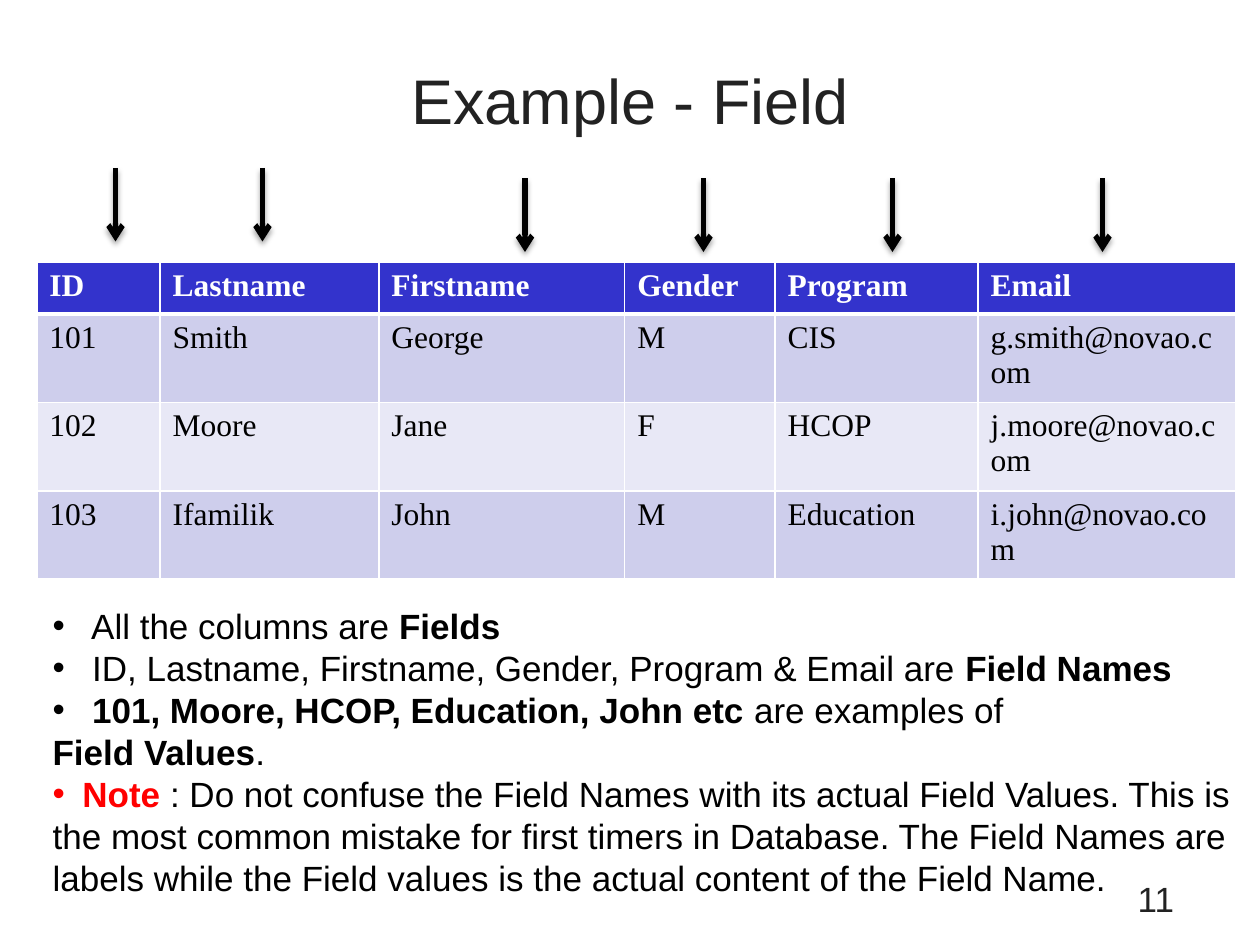
import pptx
import pptx.dml.color
import pptx.enum.shapes
import pptx.enum.text
import pptx.oxml
import pptx.oxml.ns
import pptx.util

Pt = pptx.util.Pt
RGBColor = pptx.dml.color.RGBColor
ALIGN = pptx.enum.text.PP_ALIGN
ANCHOR = pptx.enum.text.MSO_ANCHOR
NS = pptx.oxml.ns.nsdecls("a")

BLACK = RGBColor(0x00, 0x00, 0x00)
WHITE = RGBColor(0xFF, 0xFF, 0xFF)
GREY = RGBColor(0x22, 0x22, 0x22)
RED = RGBColor(0xFF, 0x00, 0x00)
BLUE = RGBColor(0x33, 0x33, 0xCC)
BANDS = (RGBColor(0xCE, 0xCE, 0xEC), RGBColor(0xE8, 0xE8, 0xF6))

SANS, SERIF = "Arial", "Times New Roman"
BULLET_INDENT = Pt(17)

COLUMN_WIDTHS = (70.5, 125, 140.5, 86, 116, 147)
HEADER_HEIGHT, RECORD_HEIGHT = 29.5, 50.5
RECORDS = (
    ("ID", "Lastname", "Firstname", "Gender", "Program", "Email"),
    ("101", "Smith", "George", "M", "CIS", "g.smith@novao.com"),
    ("102", "Moore", "Jane", "F", "HCOP", "j.moore@novao.com"),
    ("103", "Ifamilik", "John", "M", "Education", "i.john@novao.com"),
)
ARROWS = ((66, 96), (150, 96), (300, 102), (402, 102), (510, 102), (630, 102))
ARROW_LENGTH = 42

PLAIN = {"name": SANS, "size": Pt(20), "color": BLACK, "bold": False}
BOLD = {**PLAIN, "bold": True}
NOTE = {**BOLD, "color": RED}
SPACER = {**PLAIN, "name": SERIF}
NOTES = (
    (True, ((" ", SPACER), ("All the columns are ", PLAIN), ("Fields", BOLD))),
    (True, ((" ", PLAIN),
            ("ID, Lastname, Firstname, Gender, Program & Email are ", PLAIN),
            ("Field Names", BOLD))),
    (True, ((" 101, Moore, HCOP, Education, John etc ", BOLD),
            ("are examples of", PLAIN))),
    (False, (("Field Values", BOLD), (".", PLAIN))),
    (True, (("Note", NOTE),
            (" : Do not confuse the Field Names with its actual Field Values. This is", PLAIN))),
    (False, (("the most common mistake for first timers in Database. The Field Names are", PLAIN),)),
    (False, (("labels while the Field values is the actual content of the Field Name.", PLAIN),)),
)


def add_run(p, text, style):
    r = p.add_run()
    r.text = text
    for key, value in style.items():
        if key == "color":
            r.font.color.rgb = value
        else:
            setattr(r.font, key, value)


def add_text_box(s, box, **frame):
    tf = s.shapes.add_textbox(*map(Pt, box)).text_frame
    for key, value in frame.items():
        setattr(tf, key, value)
    return tf


def add_label(s, box, text, size, align, anchor):
    tf = add_text_box(s, box, word_wrap=True, vertical_anchor=anchor)
    p = tf.paragraphs[0]
    p.alignment = align
    add_run(p, text, {"name": SANS, "size": Pt(size), "color": GREY})


def add_bullet(p):
    pPr = p._p.get_or_add_pPr()
    pPr.set("marL", str(BULLET_INDENT))
    pPr.set("indent", str(-BULLET_INDENT))
    for xml in (f'<a:buFont {NS} typeface="{SANS}"/>', f'<a:buChar {NS} char="•"/>'):
        pPr.append(pptx.oxml.parse_xml(xml))


def add_notes(s, box):
    tf = add_text_box(s, box, word_wrap=False,
                      auto_size=pptx.enum.text.MSO_AUTO_SIZE.SHAPE_TO_FIT_TEXT)
    for i, (bulleted, runs) in enumerate(NOTES):
        p = tf.add_paragraph() if i else tf.paragraphs[0]
        if bulleted:
            add_bullet(p)
        for text, style in runs:
            add_run(p, text, style)


def set_borders(cell, **widths):
    tcPr = cell._tc.get_or_add_tcPr()
    for i, side in enumerate("LRTB"):
        tcPr.insert(i, pptx.oxml.parse_xml(
            f'<a:ln{side} {NS} w="{Pt(widths.get(side, 1))}"><a:solidFill>'
            f'<a:srgbClr val="{WHITE}"/></a:solidFill></a:ln{side}>'))


def add_records_table(s, left, top):
    heights = [HEADER_HEIGHT] + [RECORD_HEIGHT] * (len(RECORDS) - 1)
    box = (left, top, sum(COLUMN_WIDTHS), sum(heights))
    table = s.shapes.add_table(len(heights), len(COLUMN_WIDTHS), *map(Pt, box)).table
    for column, width in zip(table.columns, COLUMN_WIDTHS):
        column.width = Pt(width)
    for i, (record, height) in enumerate(zip(RECORDS, heights)):
        table.rows[i].height = Pt(height)
        header = i == 0
        style = {"name": SERIF, "size": Pt(18), "bold": header,
                 "color": WHITE if header else BLACK}
        for j, text in enumerate(record):
            cell = table.cell(i, j)
            cell.fill.solid()
            cell.fill.fore_color.rgb = BLUE if header else BANDS[(i - 1) % 2]
            set_borders(cell, B=3 if header else 1, T=3 if i == 1 else 1)
            add_run(cell.text_frame.paragraphs[0], text, style)


def add_down_arrow(s, x, y):
    line = s.shapes.add_connector(pptx.enum.shapes.MSO_CONNECTOR.STRAIGHT,
                                  Pt(x), Pt(y), Pt(x), Pt(y + ARROW_LENGTH))
    line.line.color.rgb = BLACK
    line.line.width = Pt(3)
    line.line._get_or_add_ln().append(
        pptx.oxml.parse_xml(f'<a:tailEnd {NS} type="arrow"/>'))
    line._element.spPr.append(pptx.oxml.parse_xml(
        f'<a:effectLst {NS}><a:outerShdw blurRad="{Pt(3.1)}" dist="{Pt(1.8)}" '
        f'dir="5400000" rotWithShape="0"><a:srgbClr val="{BLACK}">'
        '<a:alpha val="35000"/></a:srgbClr></a:outerShdw></a:effectLst>'))


def main():
    prs = pptx.Presentation()
    prs.slide_width, prs.slide_height = Pt(720), Pt(540)
    s = prs.slides.add_slide(prs.slide_layouts[6])
    add_label(s, (42, 12, 636, 90), "Example - Field", 36, ALIGN.CENTER, ANCHOR.MIDDLE)
    add_records_table(s, 21, 150)
    add_label(s, (516, 498, 162, 30), "11", 20, ALIGN.RIGHT, ANCHOR.TOP)
    add_notes(s, (23, 342, 697, 177))
    for x, y in ARROWS:
        add_down_arrow(s, x, y)
    prs.save("out.pptx")


if __name__ == "__main__":
    main()
